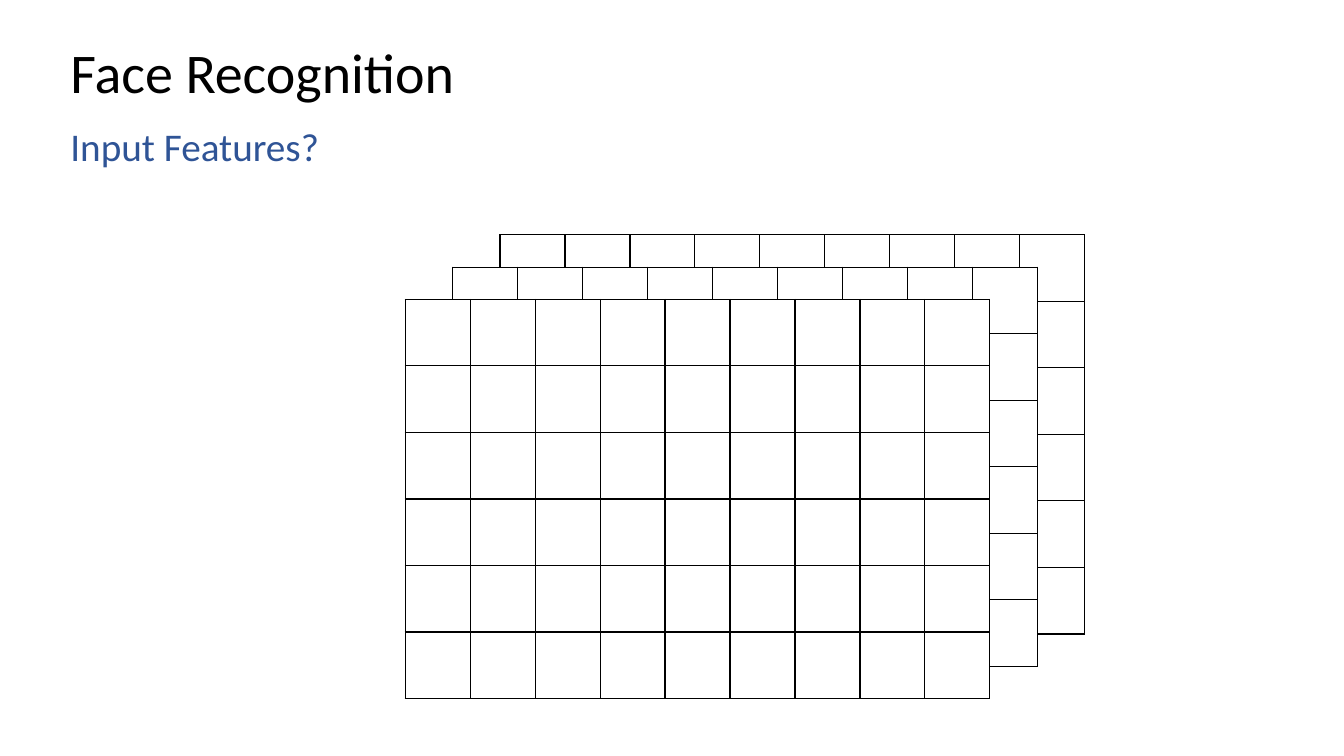
from dataclasses import dataclass

from lxml.etree import SubElement
from pptx import Presentation
from pptx.dml.color import RGBColor
from pptx.enum.text import MSO_ANCHOR
from pptx.oxml.ns import qn
from pptx.util import Inches, Pt


@dataclass(frozen=True)
class Theme:
    font: str = "Calibri"
    ink: str = "000000"
    accent: str = "2F5496"
    paper: str = "FFFFFF"
    title_size: int = 40
    body_size: int = 28
    border: float = 1


THEME = Theme()
TEXTS = [
    ("Face Recognition", (0.6, 0.4, 11.5, 0.69), THEME.title_size, THEME.ink, MSO_ANCHOR.MIDDLE),
    ("Input Features?", (0.6, 1.22, 12.26, 5.62), THEME.body_size, THEME.accent, MSO_ANCHOR.TOP),
]
LAYERS, ROWS, COLS = 3, 6, 9
BACK_LAYER = (4.96, 2.33)
LAYER_STEP = (-0.47, 0.32)
GRID_SIZE = (5.8, 3.96)


def add_text(slide, text, box, size, color, anchor):
    tf = slide.shapes.add_textbox(*map(Inches, box)).text_frame
    tf.word_wrap = True
    tf.vertical_anchor = anchor
    p = tf.paragraphs[0]
    p.text = text
    p.line_spacing = 0.9
    p.font.name = THEME.font
    p.font.size = Pt(size)
    p.font.color.rgb = RGBColor.from_string(color)


def style_cell(cell):
    props = cell._tc.get_or_add_tcPr()
    for side in ("a:lnL", "a:lnR", "a:lnT", "a:lnB"):
        line = SubElement(props, qn(side), w=str(Pt(THEME.border)))
        fill = SubElement(line, qn("a:solidFill"))
        SubElement(fill, qn("a:srgbClr"), val=THEME.ink)
    cell.fill.solid()
    cell.fill.fore_color.rgb = RGBColor.from_string(THEME.paper)


def add_grid(slide, left, top):
    box = map(Inches, (left, top, *GRID_SIZE))
    table = slide.shapes.add_table(ROWS, COLS, *box).table
    table.first_row = False
    table.horz_banding = False
    for cell in table.iter_cells():
        style_cell(cell)


def main():
    prs = Presentation()
    prs.slide_width, prs.slide_height = Inches(13.33), Inches(7.5)
    slide = prs.slides.add_slide(prs.slide_layouts[6])
    for item in TEXTS:
        add_text(slide, *item)
    for layer in range(LAYERS):
        add_grid(slide, *(start + layer * step for start, step in zip(BACK_LAYER, LAYER_STEP)))
    prs.save("out.pptx")


if __name__ == "__main__":
    main()
